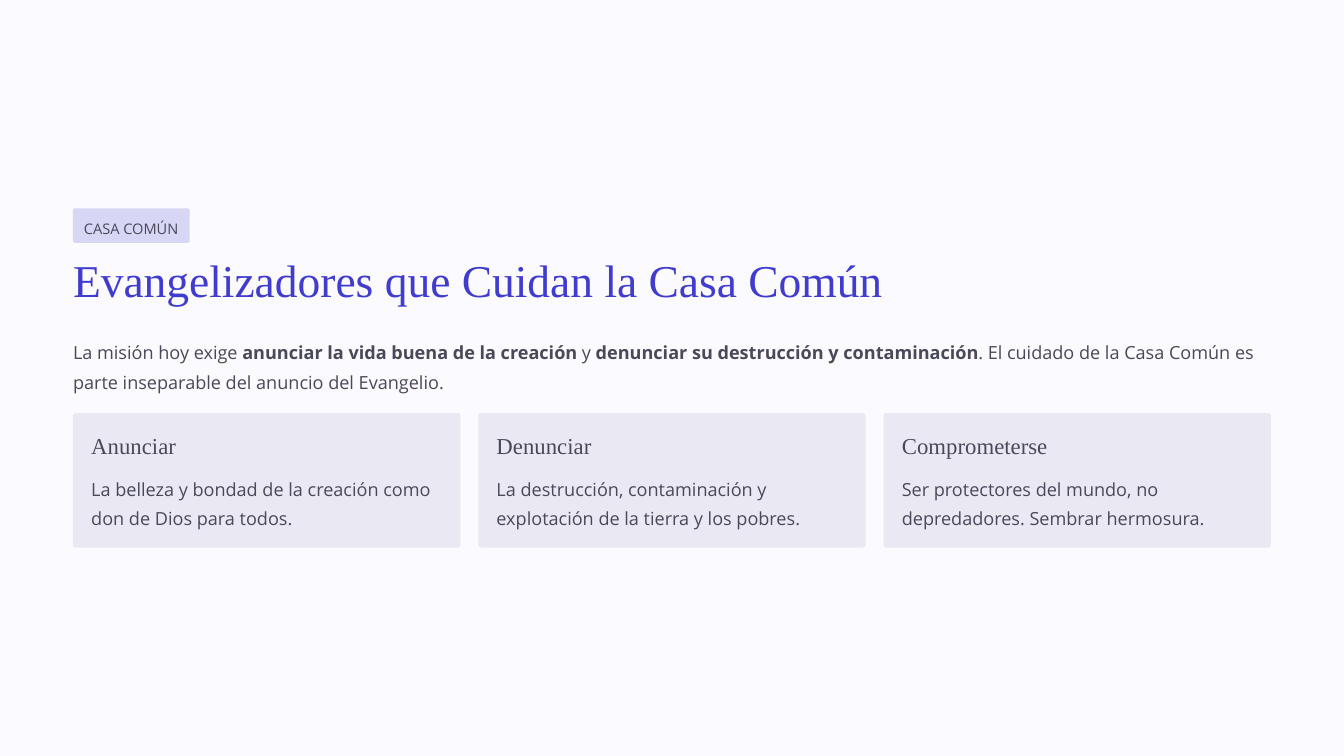
from dataclasses import dataclass

from pptx import Presentation
from pptx.dml.color import RGBColor
from pptx.enum.shapes import MSO_SHAPE as Shape
from pptx.util import Pt


@dataclass(frozen=True)
class Style:
    font: str
    size: float
    leading: float
    color: str


@dataclass(frozen=True)
class Theme:
    background: str = "FBFAFF"
    tag_fill: str = "D7D6F5"
    card_fill: str = "EAE8F3"
    tag: Style = Style("Open Sans", 12.5, 20, "49495A")
    title: Style = Style("Times New Roman", 39, 48.5, "403CCF")
    body: Style = Style("Open Sans", 15.5, 25, "49495A")
    heading: Style = Style("Times New Roman", 19.5, 24, "49495A")


THEME = Theme()
LEFT, WIDTH = 62.6, 1026.8
CARD_GAP = 15.4

INTRO = [
    ("La misión hoy exige ", False),
    ("anunciar la vida buena de la creación", True),
    (" y ", False),
    ("denunciar su destrucción y contaminación", True),
    (". El cuidado de la Casa Común es parte inseparable "
     "del anuncio del Evangelio.", False),
]
CARDS = [
    ("Anunciar",
     "La belleza y bondad de la creación como don de Dios para todos."),
    ("Denunciar",
     "La destrucción, contaminación y explotación de la tierra y los pobres."),
    ("Comprometerse",
     "Ser protectores del mundo, no depredadores. Sembrar hermosura."),
]


def add_panel(slide, x, y, w, h, color, rounding):
    sp = slide.shapes.add_shape(
        Shape.ROUNDED_RECTANGLE, Pt(x), Pt(y), Pt(w), Pt(h))
    sp.adjustments[0] = rounding
    sp.shadow.inherit = False
    sp.fill.solid()
    sp.fill.fore_color.rgb = RGBColor.from_string(color)
    sp.line.fill.background()


def add_text(slide, x, y, w, h, runs, style, wrap=False):
    """Place one paragraph made of (text, bold) runs."""
    tf = slide.shapes.add_textbox(Pt(x), Pt(y), Pt(w), Pt(h)).text_frame
    tf.margin_left = tf.margin_top = tf.margin_right = tf.margin_bottom = 0
    tf.word_wrap = wrap
    p = tf.paragraphs[0]
    p.line_spacing = Pt(style.leading)
    p.font.name = style.font
    p.font.size = Pt(style.size)
    p.font.color.rgb = RGBColor.from_string(style.color)
    for text, bold in runs:
        r = p.add_run()
        r.text = text
        if bold:
            r.font.bold = True


def add_header(slide, x, y, w):
    # Tag above the title
    add_panel(slide, x, y, 100, 29.5, THEME.tag_fill, 0.064)
    add_text(slide, x + 9.4, y + 5, 81.4, 20,
             [("CASA COMÚN", False)], THEME.tag)
    # Title and introduction
    add_text(slide, x, y + 36, w, 49,
             [("Evangelizadores que Cuidan la Casa Común", False)],
             THEME.title)
    add_text(slide, x, y + 108, w, 49.7, INTRO, THEME.body, wrap=True)


def add_card(slide, x, y, w, h, heading, body):
    pad = 15.6
    add_panel(slide, x, y, w, h, THEME.card_fill, 0.02)
    add_text(slide, x + pad, y + pad, w - 2 * pad, 24.5,
             [(heading, False)], THEME.heading)
    add_text(slide, x + pad, y + 49.7, w - 2 * pad, 49.7,
             [(body, False)], THEME.body, wrap=True)


def add_card_row(slide, x, y, w, h):
    card_w = (w - CARD_GAP * (len(CARDS) - 1)) / len(CARDS)
    for i, (heading, body) in enumerate(CARDS):
        add_card(slide, x + i * (card_w + CARD_GAP), y, card_w, h,
                 heading, body)


def main():
    prs = Presentation()
    prs.slide_width, prs.slide_height = Pt(1152), Pt(648)
    slide = prs.slides.add_slide(prs.slide_layouts[6])
    fill = slide.background.fill
    fill.solid()
    fill.fore_color.rgb = RGBColor.from_string(THEME.background)

    add_header(slide, LEFT, 178.6, WIDTH)
    add_card_row(slide, LEFT, 354.2, WIDTH, 115.2)
    prs.save("out.pptx")


if __name__ == "__main__":
    main()
